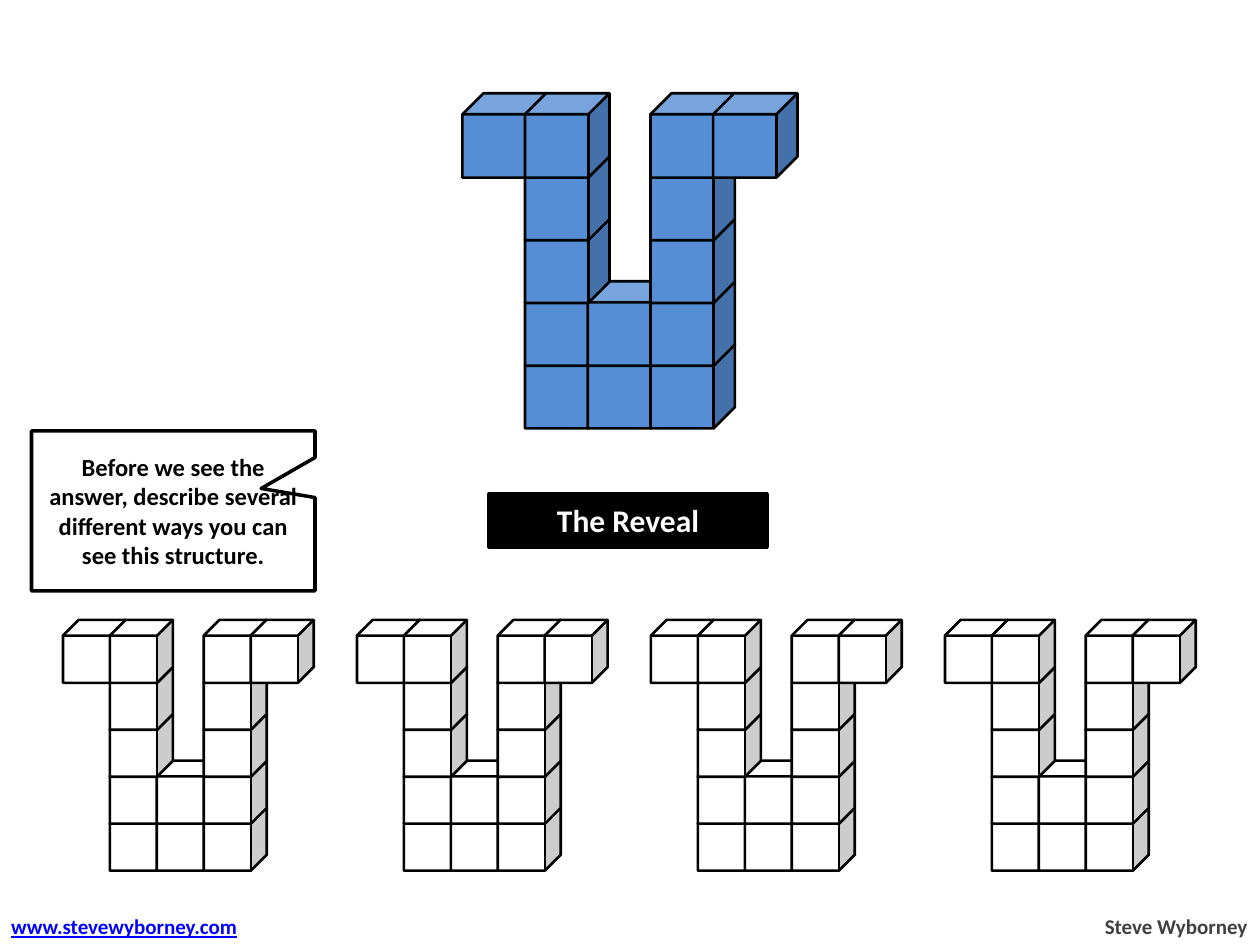
from pptx import Presentation
from pptx import util as u
from pptx.dml.color import RGBColor
from pptx.enum import shapes, text

COLORS = {
    "black": "000000",
    "white": "FFFFFF",
    "blue": "558ED5",
    "link": "0000FF",
    "gray": "404040",
}
# Cubes seen from the front, top row first
STRUCTURE = [
    "##.##",
    ".#.#.",
    ".#.#.",
    ".###.",
    ".###.",
]
ANSWER_COUNT = 4


class SlideBuilder:
    font = "Calibri"

    def __init__(self, slide):
        self.slide = slide

    def color(self, name):
        return RGBColor.from_string(COLORS[name])

    def place(self, shape, left, top, width, height):
        shape.left, shape.top = u.Inches(left), u.Inches(top)
        shape.width, shape.height = u.Inches(width), u.Inches(height)

    def paint(self, shape, fill, line_width):
        shape.fill.solid()
        shape.fill.fore_color.rgb = self.color(fill)
        shape.line.color.rgb = self.color("black")
        shape.line.width = u.Pt(line_width)

    def set_text(self, shape, words, size, color, align, underline=None):
        frame = shape.text_frame
        frame.text = words
        paragraph = frame.paragraphs[0]
        paragraph.alignment = align
        font = paragraph.runs[0].font
        font.name, font.size, font.bold = self.font, u.Pt(size), True
        font.underline = underline
        font.color.rgb = self.color(color)

    def title(self, words, left, top, width, height):
        shape = self.slide.shapes.title
        self.place(shape, left, top, width, height)
        self.paint(shape, "black", 2)
        shape.text_frame.auto_size = text.MSO_AUTO_SIZE.NONE
        shape.text_frame.vertical_anchor = text.MSO_ANCHOR.MIDDLE
        self.set_text(shape, words, 18, "white", text.PP_ALIGN.CENTER)

    def callout(self, words, left, top, width, height, tip):
        shape = self.slide.shapes.add_shape(
            shapes.MSO_SHAPE.RECTANGULAR_CALLOUT,
            u.Inches(left), u.Inches(top), u.Inches(width), u.Inches(height))
        shape.shadow.inherit = False
        shape.adjustments[0], shape.adjustments[1] = tip
        self.paint(shape, "white", 2)
        shape.text_frame.vertical_anchor = text.MSO_ANCHOR.MIDDLE
        self.set_text(shape, words, 14, "black", text.PP_ALIGN.CENTER)

    def footer(self, words, left, width, color, align, underline=None):
        shape = self.slide.shapes.add_textbox(
            u.Inches(left), u.Inches(7.2), u.Inches(width), u.Inches(0.3))
        shape.text_frame.word_wrap = False
        shape.text_frame.auto_size = text.MSO_AUTO_SIZE.SHAPE_TO_FIT_TEXT
        self.set_text(shape, words, 12, color, align, underline)

    def structure(self, left, top, cube_size, span, fill):
        """Stack cubes from the bottom row up; span is first to last cube."""
        group = self.slide.shapes.add_group_shape()
        step = span / (len(STRUCTURE) - 1)
        for row in reversed(range(len(STRUCTURE))):
            for column, mark in enumerate(STRUCTURE[row]):
                if mark == "#":
                    cube = group.shapes.add_shape(
                        shapes.MSO_SHAPE.CUBE,
                        u.Inches(left + column * step),
                        u.Inches(top + row * step),
                        u.Inches(cube_size), u.Inches(cube_size))
                    cube.shadow.inherit = False
                    self.paint(cube, fill, 1.5)


def main():
    presentation = Presentation()
    presentation.slide_width = u.Inches(10)
    presentation.slide_height = u.Inches(7.5)
    title_only = presentation.slide_layouts[5]
    builder = SlideBuilder(presentation.slides.add_slide(title_only))

    builder.title("The Reveal", 3.88, 3.92, 2.21, 0.42)
    builder.callout(
        "Before we see the answer, describe several different ways "
        "you can see this structure.",
        0.25, 3.42, 2.25, 1.27, tip=(0.31, -0.14))
    builder.footer("Steve Wyborney", 8.66, 1.34, "gray", text.PP_ALIGN.RIGHT)
    builder.footer("www.stevewyborney.com", -0.01, 2.05, "link",
                   text.PP_ALIGN.LEFT, underline=True)

    builder.structure(3.67, 0.74, 0.67, 1.99, "blue")
    for index in range(ANSWER_COUNT):
        builder.structure(0.5 + index * 7 / 3, 4.92, 0.5, 1.49, "white")

    presentation.save("out.pptx")


if __name__ == "__main__":
    main()
